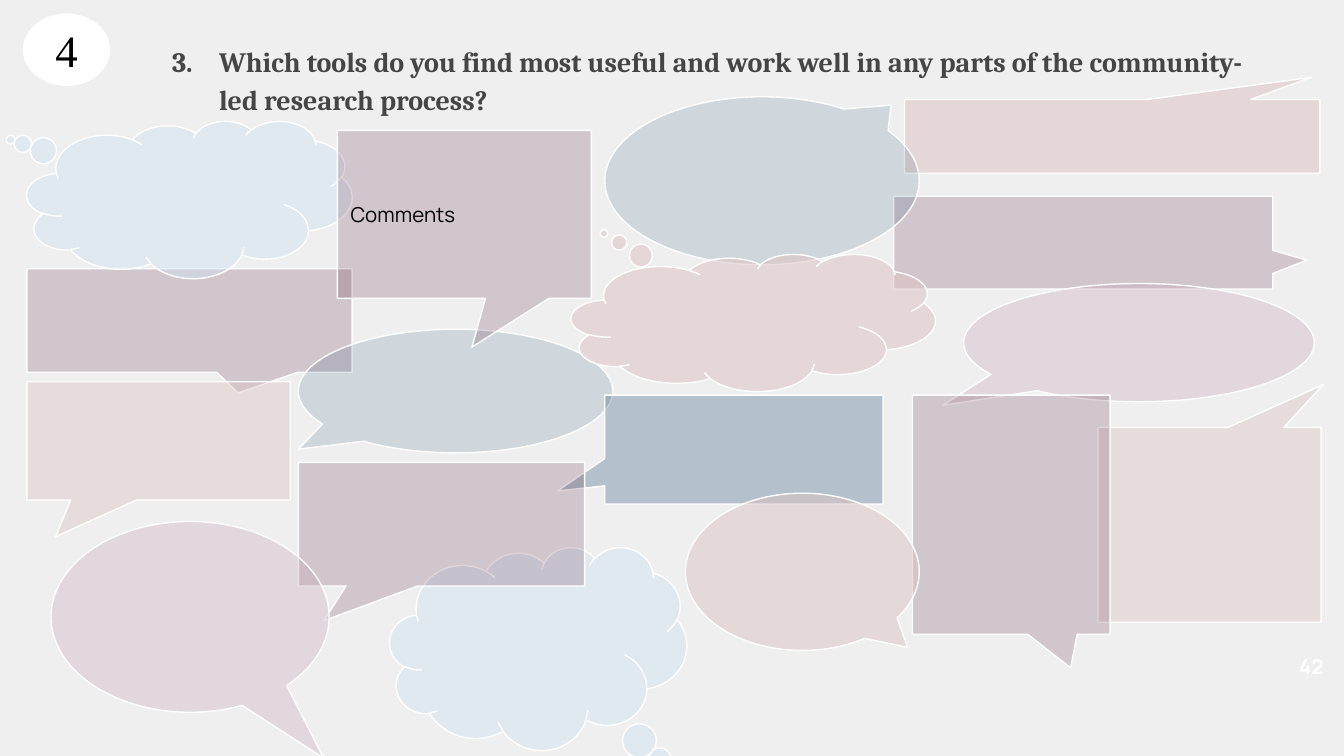
from dataclasses import dataclass

from lxml import etree
from pptx import Presentation
from pptx import util as u
from pptx.dml.color import RGBColor
from pptx.enum import shapes, text
from pptx.oxml import ns

PX = 9144  # 100 px to the inch


@dataclass(frozen=True)
class Theme:
    paper: str = "EFEFEF"
    white: str = "FFFFFF"
    black: str = "000000"
    heading: str = "454545"
    rose: str = "DDC3C3"
    plum: str = "4C1130"
    navy: str = "073763"
    sky: str = "CFE2F3"
    mauve: str = "C8ACBA"
    serif: str = "Cambria"
    sans: str = "Manrope"
    badge_font: str = "Times New Roman"
    title_size: int = 15
    comment_size: int = 11
    badge_size: int = 24
    number_size: int = 11
    line_width: float = 0.75


T = Theme()


def write(sp, content, *, size, font, color, bold=False, align=text.PP_ALIGN.LEFT, inset=10):
    tf = sp.text_frame
    tf.word_wrap = True
    tf.auto_size = text.MSO_AUTO_SIZE.NONE
    tf.vertical_anchor = text.MSO_ANCHOR.MIDDLE
    tf.margin_left = tf.margin_top = tf.margin_right = tf.margin_bottom = inset * PX
    p = tf.paragraphs[0]
    p.alignment = align
    r = p.add_run()
    r.text = content
    r.font.size, r.font.name, r.font.bold = u.Pt(size), font, bold
    r.font.color.rgb = RGBColor.from_string(color)
    return p


def add_shape(kind, box, color, alpha=100, adjustments=(), outlined=True):
    """Add a preset shape; alpha is the opacity of its fill in percent."""
    sp = s.shapes.add_shape(kind, *(n * PX for n in box))
    sp.shadow.inherit = False
    for i, value in enumerate(adjustments):
        sp.adjustments[i] = value
    sp.fill.solid()
    sp.fill.fore_color.rgb = RGBColor.from_string(color)
    if alpha < 100:
        clr = sp.fill._xPr.find(".//" + ns.qn("a:srgbClr"))
        etree.SubElement(clr, ns.qn("a:alpha"), val=str(alpha * 1000))
    if outlined:
        sp.line.color.rgb = RGBColor.from_string(T.white)
        sp.line.width = u.Pt(T.line_width)
    else:
        sp.line.fill.background()
    return sp


prs = Presentation()
prs.slide_width = 1000 * PX
prs.slide_height = prs.slide_width * 9 // 16
s = prs.slides.add_slide(prs.slide_layouts[5])
s.background.fill.solid()
s.background.fill.fore_color.rgb = RGBColor.from_string(T.paper)

# Numbered question
title = s.shapes.title
title.left, title.top, title.width, title.height = (n * PX for n in (103, 30, 844, 56))
p = write(
    title,
    "Which tools do you find most useful and work well in any parts of the community-led research process?",
    size=T.title_size, font=T.serif, color=T.heading, bold=True,
)
p.line_spacing = 1.15
pPr = p._p.get_or_add_pPr()
pPr.set("marL", str(50 * PX))
pPr.set("indent", str(-35 * PX))
bullet_color = etree.SubElement(pPr, ns.qn("a:buClr"))
etree.SubElement(bullet_color, ns.qn("a:srgbClr"), val=T.heading)
etree.SubElement(pPr, ns.qn("a:buFont"), typeface=T.serif)
etree.SubElement(pPr, ns.qn("a:buAutoNum"), type="arabicPeriod", startAt="3")

# Speech bubbles, back to front: kind, box, colour, opacity, pointer tip, text
S = shapes.MSO_SHAPE
RECT, ROUND = S.RECTANGULAR_CALLOUT, S.ROUNDED_RECTANGULAR_CALLOUT
OVAL, CLOUD = S.OVAL_CALLOUT, S.CLOUD_CALLOUT
bubbles = [
    (RECT, (673, 74, 309, 55), T.rose, 54, (0.48, -0.8), ""),
    (ROUND, (20, 200, 242, 77), T.plum, 18, (0.15, 0.7), ""),
    (OVAL, (222, 245, 234, 92), T.navy, 13, (-0.5, 0.47), ""),
    (CLOUD, (290, 407, 221, 151), T.sky, 43, (0.45, 0.6), ""),
    (CLOUD, (20, 90, 242, 117), T.sky, 43, (-0.55, -0.38), ""),
    (RECT, (20, 284, 196, 88), T.rose, 41, (-0.39, 0.81), ""),
    (ROUND, (665, 146, 282, 69), T.plum, 18, (0.59, 0.19), ""),
    (OVAL, (450, 72, 234, 125), T.navy, 13, (0.41, -0.45), ""),
    (ROUND, (251, 97, 189, 125), T.plum, 18, (0.03, 0.79), "Comments"),
    (CLOUD, (425, 189, 271, 102), T.rose, 54, (-0.41, -0.65), ""),
    (RECT, (450, 294, 207, 81), T.navy, 25, (-0.67, 0.38), ""),
    (OVAL, (717, 211, 261, 88), T.mauve, 35, (-0.56, 0.53), ""),
    (ROUND, (817, 318, 166, 145), T.rose, 41, (0.51, -0.72), ""),
    (RECT, (679, 294, 147, 178), T.plum, 18, (0.3, 0.64), ""),
    (OVAL, (510, 367, 174, 117), T.rose, 51, (0.45, 0.48), ""),
    (ROUND, (222, 344, 213, 92), T.plum, 18, (-0.41, 0.78), ""),
    (OVAL, (38, 388, 207, 142), T.mauve, 35, (0.48, 0.74), ""),
]
for kind, box, color, alpha, tip, label in bubbles:
    corner = (0,) if kind == ROUND else ()
    sp = add_shape(kind, box, color, alpha, tip + corner)
    if label:
        write(sp, label, size=T.comment_size, font=T.sans, color=T.black)

# Group badge and slide number
badge = add_shape(S.OVAL, (17, 10, 65, 54), T.white, outlined=False)
write(badge, "4", size=T.badge_size, font=T.badge_font, color=T.black, align=text.PP_ALIGN.CENTER)

number = s.shapes.add_textbox(*(n * PX for n in (945, 484, 40, 24)))
write(number, "42", size=T.number_size, font=T.sans, color=T.white, bold=True,
      align=text.PP_ALIGN.RIGHT, inset=0)

prs.save("out.pptx")
